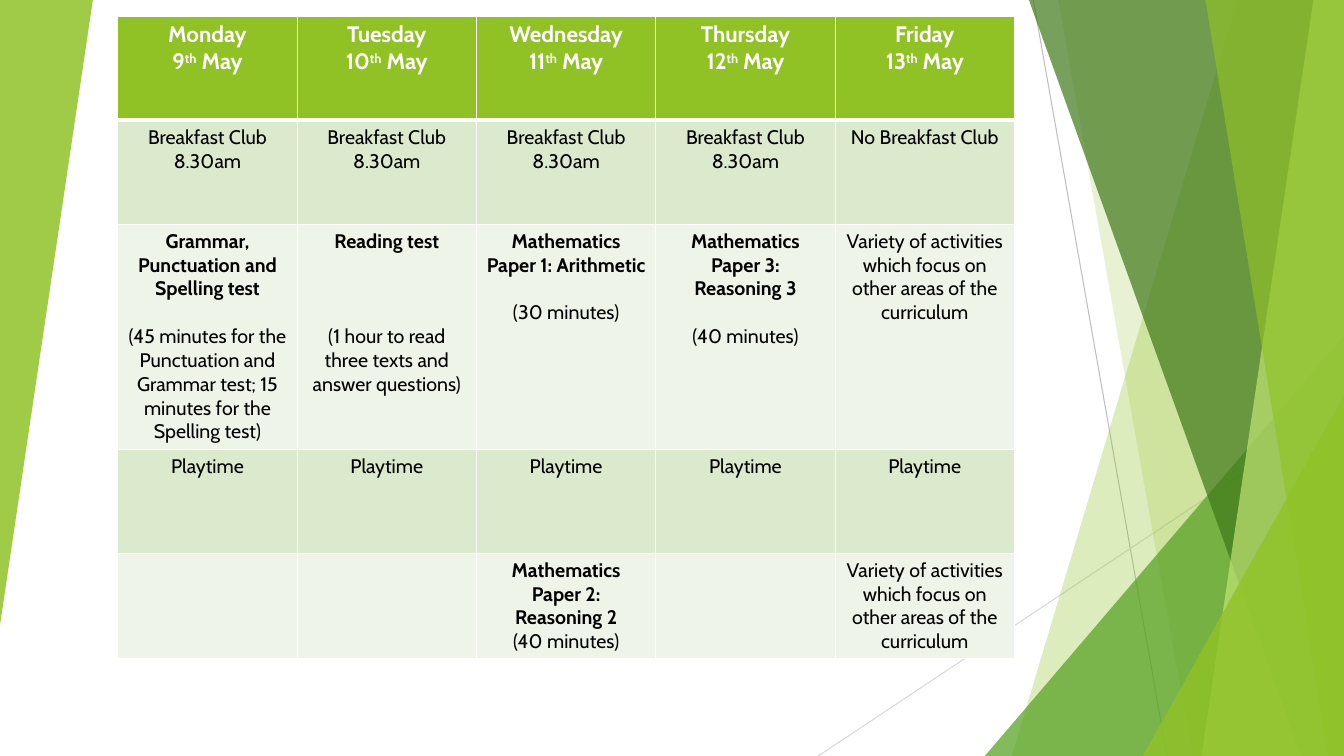
import dataclasses

import pptx
import pptx.dml.color
import pptx.enum.shapes
import pptx.enum.text
import pptx.oxml
import pptx.oxml.ns
import pptx.util
from pptx.util import Cm

WIDTH, HEIGHT = 33.87, 19.05


@dataclasses.dataclass(frozen=True)
class Theme:
    font: str = "Cabin"
    header_size: int = 16
    body_size: int = 14
    line_height: int = 17
    white: str = "FFFFFF"
    black: str = "000000"
    lime: str = "90C226"
    green: str = "54A021"
    forest: str = "3F7819"
    pale_lime: str = "C0E474"
    bands: tuple = ("DBE9CD", "EEF4E8")
    grey: str = "BFBFBF"
    light_grey: str = "D9D9D9"


@dataclasses.dataclass(frozen=True)
class Line:
    """One paragraph of a cell; gap counts the free lines above it."""
    text: str
    bold: bool = False
    gap: int = 0
    superscript: str = ""
    tail: str = ""


class Painter:
    def __init__(self, page, theme):
        self.page = page
        self.theme = theme

    def color(self, value):
        return pptx.dml.color.RGBColor.from_string(value)

    def finish(self, shape, color, opacity):
        """Fill a shape with a see-through colour, without outline or shadow."""
        shape.shadow.inherit = False
        shape.line.fill.background()
        shape.fill.solid()
        shape.fill.fore_color.rgb = self.color(color)
        tint = shape._element.spPr.find(".//" + pptx.oxml.ns.qn("a:srgbClr"))
        alpha = pptx.oxml.parse_xml(
            f'<a:alpha {pptx.oxml.ns.nsdecls("a")} val="{opacity * 1000}"/>')
        tint.append(alpha)

    def hairline(self, start, end, color):
        line = self.page.shapes.add_connector(
            pptx.enum.shapes.MSO_CONNECTOR.STRAIGHT,
            *(Cm(value) for value in start + end))
        line.line.color.rgb = self.color(color)
        line.line.width = pptx.util.Pt(0.75)
        line._element.spPr.append(pptx.oxml.parse_xml(
            f'<a:effectLst {pptx.oxml.ns.nsdecls("a")}/>'))

    def stripe(self, top_x, bottom_x, color, opacity):
        """Draw a band from a slanted left edge to the right slide edge."""
        builder = self.page.shapes.build_freeform(Cm(top_x), Cm(0))
        builder.add_line_segments([
            (Cm(WIDTH), Cm(0)), (Cm(WIDTH), Cm(HEIGHT)), (Cm(bottom_x), Cm(HEIGHT))])
        self.finish(builder.convert_to_shape(), color, opacity)

    def triangle(self, left, top, right, bottom, color, opacity, rotation=0):
        shape = self.page.shapes.add_shape(
            pptx.enum.shapes.MSO_SHAPE.ISOSCELES_TRIANGLE,
            Cm(left), Cm(top), Cm(right - left), Cm(bottom - top))
        shape.adjustments[0] = 1
        shape.rotation = rotation
        self.finish(shape, color, opacity)

    def borders(self, cell, top, bottom):
        properties = cell._tc.get_or_add_tcPr()
        sides = (("L", 1), ("R", 1), ("T", top), ("B", bottom))
        for index, (side, points) in enumerate(sides):
            properties.insert(index, pptx.oxml.parse_xml(
                f'<a:ln{side} {pptx.oxml.ns.nsdecls("a")} w="{pptx.util.Pt(points)}">'
                f'<a:solidFill><a:srgbClr val="{self.theme.white}"/></a:solidFill>'
                f'</a:ln{side}>'))

    def cell_text(self, cell, lines, size, color):
        frame = cell.text_frame
        for index, line in enumerate(lines):
            para = frame.add_paragraph() if index else frame.paragraphs[0]
            para.alignment = pptx.enum.text.PP_ALIGN.CENTER
            para.font.name = self.theme.font
            para.font.size = pptx.util.Pt(size)
            para.font.bold = line.bold
            para.font.color.rgb = self.color(color)
            if line.gap:
                para.space_before = pptx.util.Pt(line.gap * self.theme.line_height)
            para.add_run().text = line.text
            if line.superscript:
                span = para.add_run()
                span.text = line.superscript
                span._r.get_or_add_rPr().set("baseline", "30000")
                para.add_run().text = line.tail

    def timetable(self, rows, left, top, column_width, row_heights):
        theme = self.theme
        columns = len(rows[0])
        table = self.page.shapes.add_table(
            len(rows), columns, Cm(left), Cm(top),
            Cm(column_width * columns), Cm(sum(row_heights))).table
        for column in table.columns:
            column.width = Cm(column_width)
        for index, (row, height) in enumerate(zip(rows, row_heights)):
            table.rows[index].height = Cm(height)
            header = index == 0
            fill = theme.lime if header else theme.bands[(index - 1) % 2]
            size = theme.header_size if header else theme.body_size
            color = theme.white if header else theme.black
            for position, lines in enumerate(row):
                cell = table.cell(index, position)
                cell.fill.solid()
                cell.fill.fore_color.rgb = self.color(fill)
                self.borders(cell, 3 if index == 1 else 1, 3 if header else 1)
                self.cell_text(cell, lines, size, color)


def timetable_rows():
    weekdays = ("Monday", "Tuesday", "Wednesday", "Thursday", "Friday")
    days = [[Line(day, True), Line(str(date), True, superscript="th", tail=" May")]
            for date, day in enumerate(weekdays, 9)]
    breakfast = [Line("Breakfast Club"), Line("8.30am")]
    activities = [Line("Variety of activities which focus on other areas of the curriculum")]
    tests = [
        [Line("Grammar, Punctuation and Spelling test", True),
         Line("(45 minutes for the Punctuation and Grammar test; "
              "15 minutes for the Spelling test)", gap=1)],
        [Line("Reading test", True),
         Line("(1 hour to read three texts and answer questions)", gap=3)],
        [Line("Mathematics", True), Line("Paper 1: Arithmetic", True),
         Line("(30 minutes)", gap=1)],
        [Line("Mathematics", True), Line("Paper 3:", True), Line("Reasoning 3", True),
         Line("(40 minutes)", gap=1)],
        activities,
    ]
    second_paper = [Line("Mathematics", True), Line("Paper 2: Reasoning 2", True),
                    Line("(40 minutes)")]
    return [
        days,
        [breakfast] * 4 + [[Line("No Breakfast Club")]],
        tests,
        [[Line("Playtime")]] * 5,
        [[], [], second_paper, [], activities],
    ]


def main():
    deck = pptx.Presentation()
    deck.slide_width, deck.slide_height = Cm(WIDTH), Cm(HEIGHT)
    theme = Theme()
    painter = Painter(deck.slides.add_slide(deck.slide_layouts[6]), theme)

    painter.hairline((26.04, 0), (29.41, HEIGHT), theme.grey)
    painter.hairline((WIDTH, 10.24), (20.62, HEIGHT), theme.light_grey)
    painter.stripe(31.19, 25.5, theme.lime, 30)
    painter.stripe(26.67, 30.05, theme.lime, 20)
    painter.triangle(24.82, 8.46, WIDTH, HEIGHT, theme.green, 72)
    painter.stripe(25.93, 32.79, theme.forest, 70)
    painter.stripe(33.1, 30.28, theme.pale_lime, 70)
    painter.stripe(30.38, 33.48, theme.lime, 65)
    painter.triangle(28.8, 9.98, WIDTH, HEIGHT, theme.lime, 80)
    painter.triangle(0, 0, 2.34, 15.75, theme.lime, 85, rotation=180)

    painter.timetable(timetable_rows(), 2.97, 0.41, 4.52, (2.62, 2.62, 5.67, 2.62, 2.62))
    deck.save("out.pptx")


if __name__ == "__main__":
    main()
